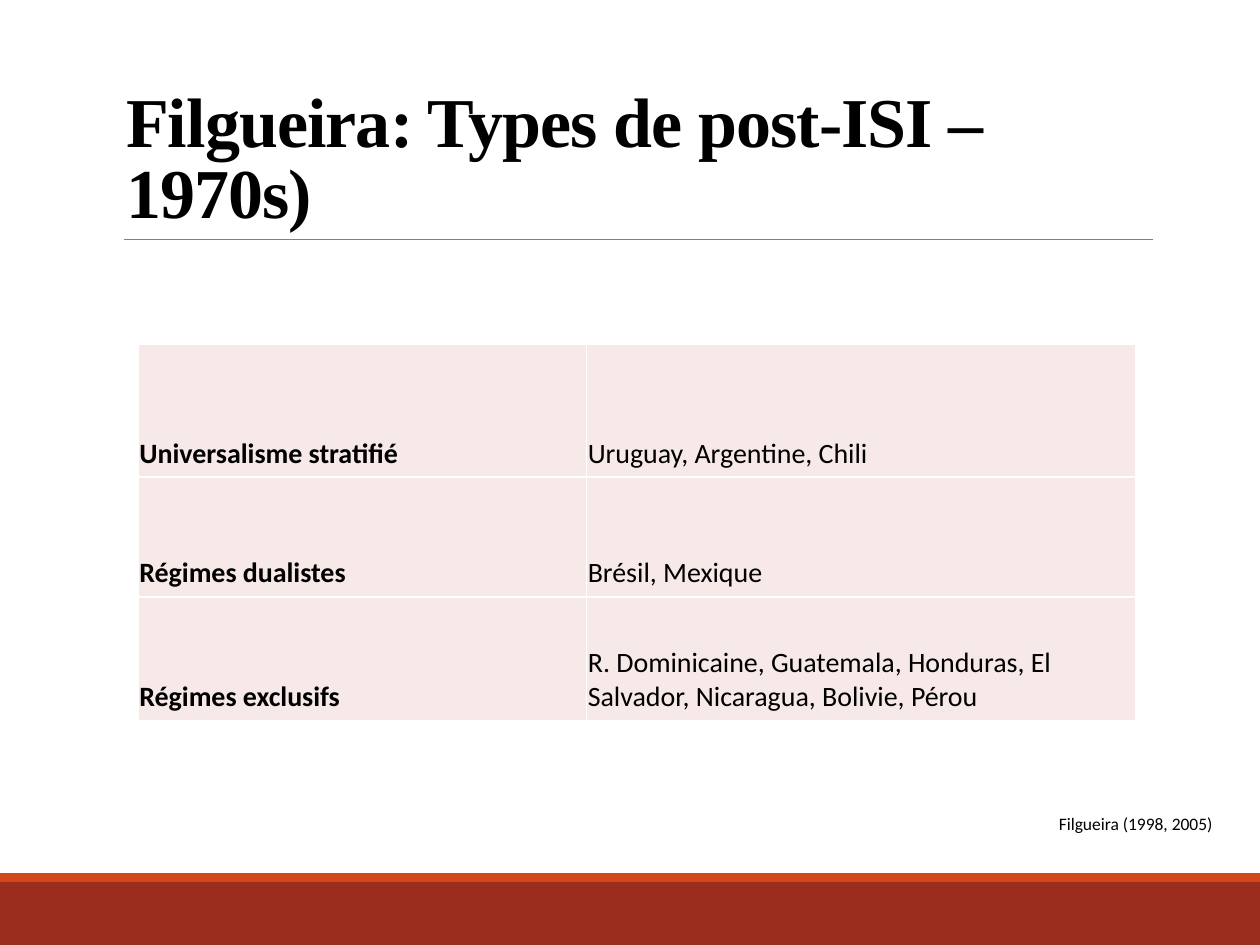
from lxml import etree
from pptx import Presentation
from pptx import util as u
from pptx.dml.color import RGBColor
from pptx.enum import shapes, text
from pptx.oxml import ns

BLACK = RGBColor(0x00, 0x00, 0x00)
WHITE = RGBColor(0xFF, 0xFF, 0xFF)
GREY = RGBColor(0x80, 0x80, 0x80)
BRICK = RGBColor(0x9B, 0x2D, 0x1F)
ORANGE = RGBColor(0xD3, 0x48, 0x17)
PALE_PINK = RGBColor(0xF7, 0xE9, 0xE8)

SLIDE_WIDTH, SLIDE_HEIGHT = 25.4, 19.05
REGIMES = [
    ("Universalisme stratifié", "Uruguay, Argentine, Chili"),
    ("Régimes dualistes", "Brésil, Mexique"),
    ("Régimes exclusifs",
     "R. Dominicaine, Guatemala, Honduras, El Salvador, Nicaragua, Bolivie, Pérou"),
]
COLUMN_WIDTHS = [9.04, 11.07]
ROW_HEIGHTS = [2.69, 2.41, 2.49]


class SlideBuilder:
    title_font = "Times New Roman"
    body_font = "Calibri"

    def __init__(self, slide):
        self.slide = slide

    def place(self, shape, left, top, width, height):
        shape.left, shape.top = u.Cm(left), u.Cm(top)
        shape.width, shape.height = u.Cm(width), u.Cm(height)

    def run(self, paragraph, content, size, font=body_font, bold=False):
        run = paragraph.add_run()
        run.text = content
        run.font.name = font
        run.font.size = u.Pt(size)
        run.font.bold = bold
        run.font.color.rgb = BLACK
        return run

    def band(self, top, height, color):
        shape = self.slide.shapes.add_shape(
            shapes.MSO_SHAPE.RECTANGLE, 0, u.Cm(top), u.Cm(SLIDE_WIDTH), u.Cm(height))
        shape.shadow.inherit = False
        shape.fill.solid()
        shape.fill.fore_color.rgb = color
        shape.line.fill.background()

    def rule(self, left, right, top):
        line = self.slide.shapes.add_connector(
            shapes.MSO_CONNECTOR.STRAIGHT, u.Cm(left), u.Cm(top), u.Cm(right), u.Cm(top))
        line.line.color.rgb = GREY
        line.line.width = u.Pt(0.5)
        etree.SubElement(line._element.spPr, ns.qn("a:effectLst"))

    def title(self, content, *box):
        title = self.slide.shapes.title
        self.place(title, *box)
        frame = title.text_frame
        frame.word_wrap = True
        frame.auto_size = text.MSO_AUTO_SIZE.NONE
        frame.vertical_anchor = text.MSO_ANCHOR.BOTTOM
        paragraph = frame.paragraphs[0]
        paragraph.alignment = text.PP_ALIGN.LEFT
        paragraph.line_spacing = 0.85
        run = self.run(paragraph, content, 40, self.title_font, True)
        run.font._element.set("spc", "-50")

    def borders(self, cell, color):
        properties = cell._tc.get_or_add_tcPr()
        for position, edge in enumerate(("lnL", "lnR", "lnT", "lnB")):
            line = etree.Element(ns.qn(f"a:{edge}"), w=str(u.Pt(1)))
            fill = etree.SubElement(line, ns.qn("a:solidFill"))
            etree.SubElement(fill, ns.qn("a:srgbClr"), val=str(color))
            properties.insert(position, line)

    def cell(self, cell, content, bold):
        cell.fill.solid()
        cell.fill.fore_color.rgb = PALE_PINK
        cell.vertical_anchor = text.MSO_ANCHOR.BOTTOM
        cell.margin_left = cell.margin_right = cell.margin_top = u.Cm(0.03)
        cell.margin_bottom = u.Cm(0.13)
        self.run(cell.text_frame.paragraphs[0], content, 16, bold=bold)
        self.borders(cell, WHITE)

    def table(self, rows, left, top, widths, heights):
        table = self.slide.shapes.add_table(
            len(rows), len(widths), u.Cm(left), u.Cm(top),
            u.Cm(sum(widths)), u.Cm(sum(heights))).table
        table.first_row = table.horz_banding = False
        for column, width in zip(table.columns, widths):
            column.width = u.Cm(width)
        for row, height, contents in zip(table.rows, heights, rows):
            row.height = u.Cm(height)
            for index, content in enumerate(contents):
                self.cell(row.cells[index], content, bold=index == 0)

    def source(self, content, *box):
        shape = self.slide.shapes.add_textbox(*map(u.Cm, box))
        frame = shape.text_frame
        frame.word_wrap = True
        frame.auto_size = text.MSO_AUTO_SIZE.SHAPE_TO_FIT_TEXT
        paragraph = frame.paragraphs[0]
        paragraph.alignment = text.PP_ALIGN.RIGHT
        self.run(paragraph, content, 10)


def main():
    presentation = Presentation()
    presentation.slide_width = u.Cm(SLIDE_WIDTH)
    presentation.slide_height = u.Cm(SLIDE_HEIGHT)
    builder = SlideBuilder(presentation.slides.add_slide(presentation.slide_layouts[5]))
    builder.band(17.78, 1.27, BRICK)
    builder.band(17.6, 0.18, ORANGE)
    builder.rule(2.49, 23.24, 4.83)
    builder.title("Filgueira: Types de post-ISI – 1970s)", 2.29, 0.79, 20.95, 4.04)
    builder.table(REGIMES, 2.78, 6.93, COLUMN_WIDTHS, ROW_HEIGHTS)
    builder.source("Filgueira (1998, 2005)", 18.69, 16.26, 6, 0.68)
    presentation.save("out.pptx")


if __name__ == "__main__":
    main()
